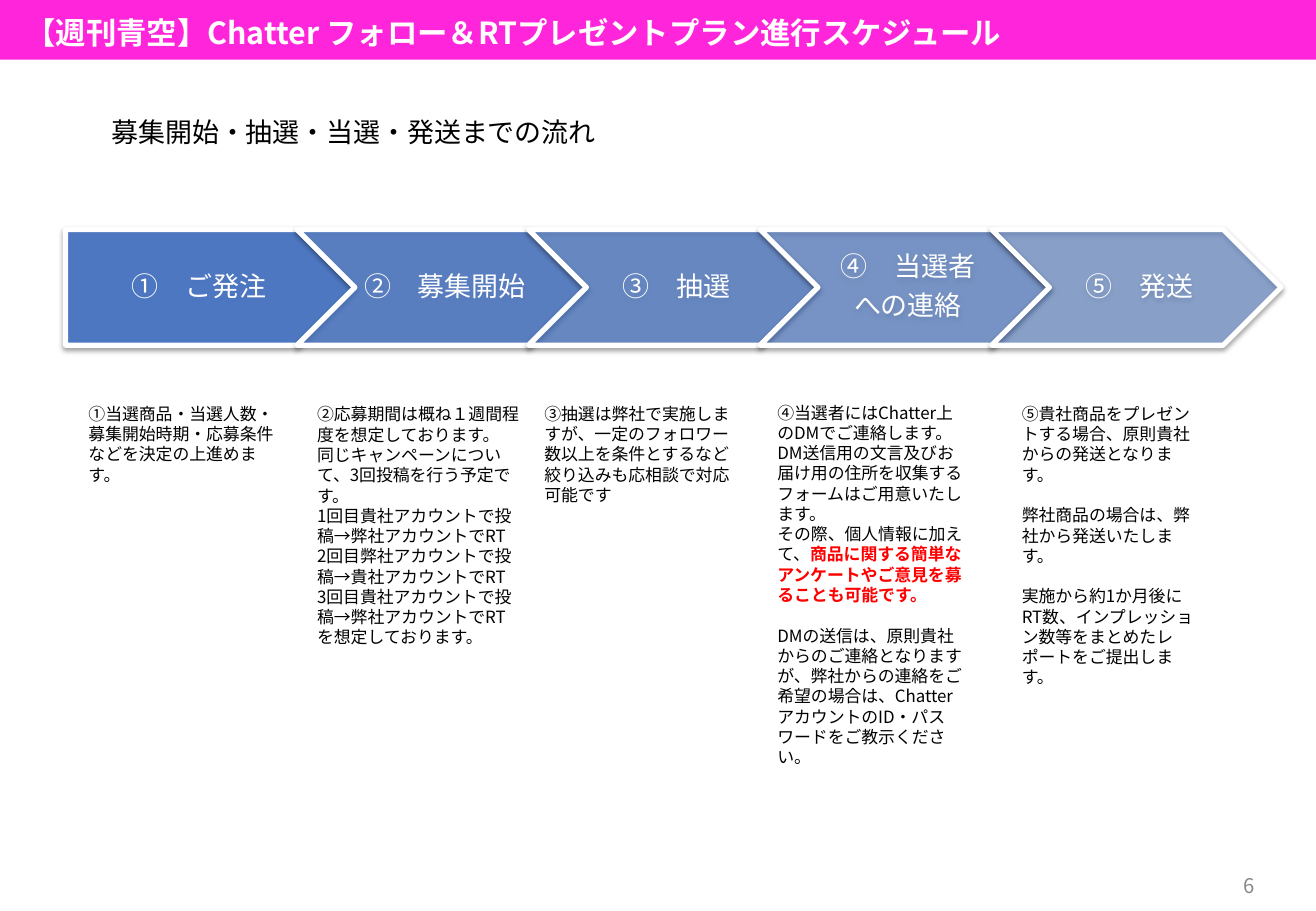
from lxml import etree
from pptx import Presentation
from pptx.dml.color import RGBColor
from pptx.enum.lang import MSO_LANGUAGE_ID
from pptx.enum.shapes import MSO_SHAPE
from pptx.enum.text import MSO_ANCHOR, PP_ALIGN
from pptx.oxml.ns import qn
from pptx.util import Cm, Pt

RECTANGLE = MSO_SHAPE.RECTANGLE
PENTAGON = MSO_SHAPE.PENTAGON
CHEVRON = MSO_SHAPE.CHEVRON
TOP, MIDDLE = MSO_ANCHOR.TOP, MSO_ANCHOR.MIDDLE
LEFT, CENTER, RIGHT = PP_ALIGN.LEFT, PP_ALIGN.CENTER, PP_ALIGN.RIGHT
JAPANESE = MSO_LANGUAGE_ID.JAPANESE
FONT = "Noto Sans CJK JP"
RED_BOLD = {"color": "FF0000", "bold": True}
GAP = {"space_before": Pt(12)}


def color(hex_string):
    return RGBColor.from_string(hex_string)


def write(frame, paragraphs, size, text_color="000000", bold=False, font=FONT,
          anchor=TOP, margins=(0.25, 0.13, 0.25, 0.13), **paragraph_format):
    """Fill a text frame; each paragraph is a string or (runs, own format)."""
    frame_format = {"word_wrap": True, "vertical_anchor": anchor}
    sides = ("margin_left", "margin_top", "margin_right", "margin_bottom")
    frame_format.update(zip(sides, map(Cm, margins)))
    for name, value in frame_format.items():
        setattr(frame, name, value)
    for index, content in enumerate(paragraphs):
        paragraph = frame.add_paragraph() if index else frame.paragraphs[0]
        runs, own_format = ([(content, {})], {}) if isinstance(content, str) else content
        for name, value in {"alignment": LEFT, **paragraph_format, **own_format}.items():
            setattr(paragraph, name, value)
        # Keep closing punctuation inside the text margins
        paragraph._p.get_or_add_pPr().set("hangingPunct", "0")
        for text, run_format in runs:
            run = paragraph.add_run()
            run.text = text
            run.font.color.rgb = color(run_format.get("color", text_color))
            font_format = {"name": font, "size": Pt(size), "language_id": JAPANESE,
                           "bold": run_format.get("bold", bold)}
            for name, value in font_format.items():
                setattr(run.font, name, value)
            properties = run.font._element
            etree.SubElement(properties, qn("a:ea"), typeface=FONT)


presentation = Presentation()
presentation.slide_width, presentation.slide_height = Cm(27.51), Cm(19.05)
slide = presentation.slides.add_slide(presentation.slide_layouts[6])

# Title band
band = slide.shapes.add_shape(RECTANGLE, 0, 0, presentation.slide_width, Cm(1.25))
band.shadow.inherit = False
band.fill.solid()
band.fill.fore_color.rgb = color("FF25DB")
band.line.fill.background()

title = slide.shapes.add_textbox(Cm(0.53), Cm(0.08), Cm(24), Cm(1.12))
write(title.text_frame, ["【週刊青空】Chatter フォロー＆RTプレゼントプラン進行スケジュール"], 18,
      "FFFFFF", bold=True, anchor=MIDDLE, margins=(0, 0.3, 0.25, 0.13), line_spacing=0.9)

subtitle = slide.shapes.add_textbox(Cm(2.08), Cm(2.29), Cm(24), Cm(0.94))
write(subtitle.text_frame, ["募集開始・抽選・当選・発送までの流れ"], 16)

page_number = slide.shapes.add_textbox(Cm(20.75), Cm(18), Cm(5.72), Cm(1.02))
write(page_number.text_frame, ["6"], 12, "888888", anchor=MIDDLE, alignment=RIGHT)

# Process arrows, each paler than the one before
steps = [["①　ご発注"], ["②　募集開始"], ["③　抽選"], ["④　当選者", "への連絡"], ["⑤　発送"]]
for index, label in enumerate(steps):
    kind = CHEVRON if index else PENTAGON
    arrow = slide.shapes.add_shape(kind, Cm(1.37 + 4.84 * index), Cm(4.8), Cm(6.05), Cm(2.42))
    arrow.shadow.inherit = False
    arrow.fill.solid()
    arrow.fill.fore_color.rgb = color("4472C4")
    arrow.line.color.rgb = color("FFFFFF")
    arrow.line.width = Pt(3)
    fill_color = arrow._element.spPr.find(qn("a:solidFill"))[0]
    etree.SubElement(fill_color, qn("a:alpha"), val=str(90000 - 10000 * index))
    effects = arrow._element.spPr.find(qn("a:effectLst"))
    shadow = etree.SubElement(effects, qn("a:outerShdw"), blurRad=str(Pt(3.1)),
                              dist=str(Pt(1.6)), dir="5400000", rotWithShape="0")
    shadow_color = etree.SubElement(shadow, qn("a:srgbClr"), val="000000")
    etree.SubElement(shadow_color, qn("a:alpha"), val="38000")
    write(arrow.text_frame, label, 16, "FFFFFF", font="Arial", anchor=MIDDLE,
          margins=(0.18, 0.13, 0.05, 0.13), alignment=CENTER, line_spacing=0.9,
          space_after=Pt(5.6))

# Explanation under each arrow: left, top, width, height, paragraphs
explanations = [
    (1.6, 8.31, 4.42, 1.55, [
        "①当選商品・当選人数・募集開始時期・応募条件などを決定の上進めます。"]),
    (6.38, 8.32, 4.78, 4.95, [
        "②応募期間は概ね１週間程度を想定しております。",
        "同じキャンペーンについて、3回投稿を行う予定です。",
        "1回目貴社アカウントで投稿→弊社アカウントでRT",
        "2回目弊社アカウントで投稿→貴社アカウントでRT",
        "3回目貴社アカウントで投稿→弊社アカウントでRT",
        "を想定しております。"]),
    (11.13, 8.31, 4.42, 2.39, [
        "③抽選は弊社で実施しますが、一定のフォロワー数以上を条件とするなど"
        "絞り込みも応相談で対応可能です"]),
    (16, 8.28, 4.42, 7.52, [
        "④当選者にはChatter上のDMでご連絡します。",
        "DM送信用の文言及びお届け用の住所を収集するフォームはご用意いたします。",
        ([("その際、個人情報に加えて、", {}),
          ("商品に関する簡単なアンケートやご意見を募ることも可能です。", RED_BOLD)], {}),
        ([("DMの送信は、原則貴社からのご連絡となりますが、弊社からの連絡をご希望の場合は、"
           "ChatterアカウントのID・パスワードをご教示ください。", {})], GAP)]),
    (21.11, 8.31, 4.19, 4.95, [
        "⑤貴社商品をプレゼントする場合、原則貴社からの発送となります。",
        ([("弊社商品の場合は、弊社から発送いたします。", {})], GAP),
        ([("実施から約1か月後にRT数、インプレッション数等をまとめた"
           "レポートをご提出します。", {})], GAP)]),
]
for left, top, width, height, paragraphs in explanations:
    box = slide.shapes.add_textbox(Cm(left), Cm(top), Cm(width), Cm(height))
    write(box.text_frame, paragraphs, 10)

presentation.save("out.pptx")
